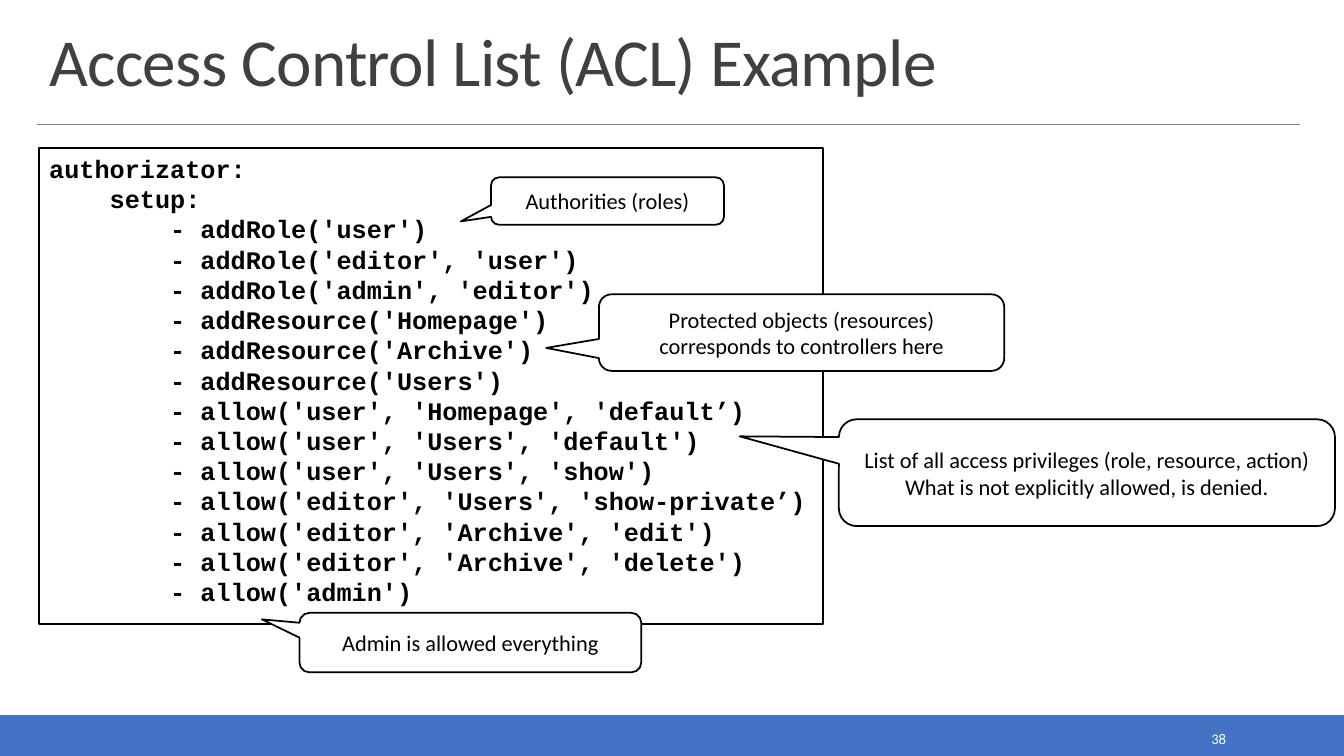
from pptx import Presentation
from pptx import util as u
from pptx.dml.color import RGBColor
from pptx.enum import shapes, text
from pptx.oxml.ns import qn
from lxml import etree

WIDTH, HEIGHT = 13.33, 7.5
LEFT = 0.39
BAR_TOP = 7.1

deck = Presentation()
deck.slide_width, deck.slide_height = u.Inches(WIDTH), u.Inches(HEIGHT)
page = deck.slides.add_slide(deck.slide_layouts[5])


def color(value):
    return RGBColor.from_string(value)


def write(box, lines, size, ink="000000", font="Calibri", bold=False,
          align=text.PP_ALIGN.LEFT, anchor=text.MSO_ANCHOR.MIDDLE):
    frame = box.text_frame
    frame.word_wrap = True
    frame.auto_size = text.MSO_AUTO_SIZE.NONE
    frame.vertical_anchor = anchor
    for index, line in enumerate(lines):
        para = frame.add_paragraph() if index else frame.paragraphs[0]
        para.alignment = align
        for part, words in enumerate(line.split("\n")):
            if part:
                para.add_line_break()
            span = para.add_run()
            span.text = words
            span.font.name, span.font.size, span.font.bold = font, u.Pt(size), bold
            span.font.color.rgb = color(ink)


# Footer bar and slide number
bar = page.shapes.add_shape(shapes.MSO_SHAPE.RECTANGLE, 0, u.Inches(BAR_TOP),
                            deck.slide_width, u.Inches(HEIGHT - BAR_TOP))
bar.shadow.inherit = False
bar.fill.solid()
bar.fill.fore_color.rgb = bar.line.color.rgb = color("4472C4")
bar.line.width = u.Pt(1.25)
number = page.shapes.add_textbox(*map(u.Inches, (10.83, 7.19, 1.43, 0.28)))
write(number, ["38"], 10.5, "FFFFFF", align=text.PP_ALIGN.RIGHT)

# Title and the rule below it
title = page.shapes.title
title.left, title.top, title.width, title.height = map(u.Inches, (LEFT, 0.2, 12.52, 0.84))
write(title, ["Access Control List (ACL) Example"], 48, "404040",
      anchor=text.MSO_ANCHOR.BOTTOM)
heading = title.text_frame.paragraphs[0]
heading.line_spacing = 0.85
heading.runs[0].font._element.set("spc", "-50")

rule = page.shapes.add_connector(shapes.MSO_CONNECTOR.STRAIGHT,
                                 *map(u.Inches, (0.37, 1.23, 12.89, 1.23)))
rule.line.color.rgb = color("808080")
rule.line.width = u.Pt(0.5)
etree.SubElement(rule._element.spPr, qn("a:effectLst"))

# Configuration listing
code = """authorizator:
    setup:
        - addRole('user')
        - addRole('editor', 'user')
        - addRole('admin', 'editor')
        - addResource('Homepage')
        - addResource('Archive')
        - addResource('Users')
        - allow('user', 'Homepage', 'default’)
        - allow('user', 'Users', 'default')
        - allow('user', 'Users', 'show')
        - allow('editor', 'Users', 'show-private’)
        - allow('editor', 'Archive', 'edit')
        - allow('editor', 'Archive', 'delete')
        - allow('admin')"""
listing = page.shapes.add_shape(shapes.MSO_SHAPE.RECTANGLE,
                                *map(u.Inches, (LEFT, 1.47, 7.77, 4.72)))
listing.shadow.inherit = False
listing.fill.background()
listing.line.color.rgb = color("000000")
listing.line.width = u.Pt(1.25)
write(listing, code.split("\n"), 18, font="Courier New", bold=True,
      anchor=text.MSO_ANCHOR.TOP)

# Callouts: place, pointer tip as shares of the callout's size, words
callouts = [
    ((4.87, 1.76, 2.31, 0.47), (-0.63, 0.43), "Authorities (roles)"),
    ((5.94, 2.92, 4.02, 0.76), (-0.63, 0.2),
     "Protected objects (resources) corresponds to controllers here"),
    ((8.32, 4.16, 4.92, 1.06), (-0.7, -0.34),
     "List of all access privileges (role, resource, action)\n"
     "What is not explicitly allowed, is denied."),
    ((2.97, 6.08, 3.39, 0.59), (-0.61, -0.39), "Admin is allowed everything"),
]
for place, tip, words in callouts:
    callout = page.shapes.add_shape(shapes.MSO_SHAPE.ROUNDED_RECTANGULAR_CALLOUT,
                                    *map(u.Inches, place))
    callout.adjustments[0], callout.adjustments[1] = tip
    callout.shadow.inherit = False
    callout.fill.solid()
    callout.fill.fore_color.rgb = color("FFFFFF")
    callout.line.color.rgb = color("000000")
    callout.line.width = u.Pt(1.25)
    write(callout, [words], 16, align=text.PP_ALIGN.CENTER)

deck.save("out.pptx")
